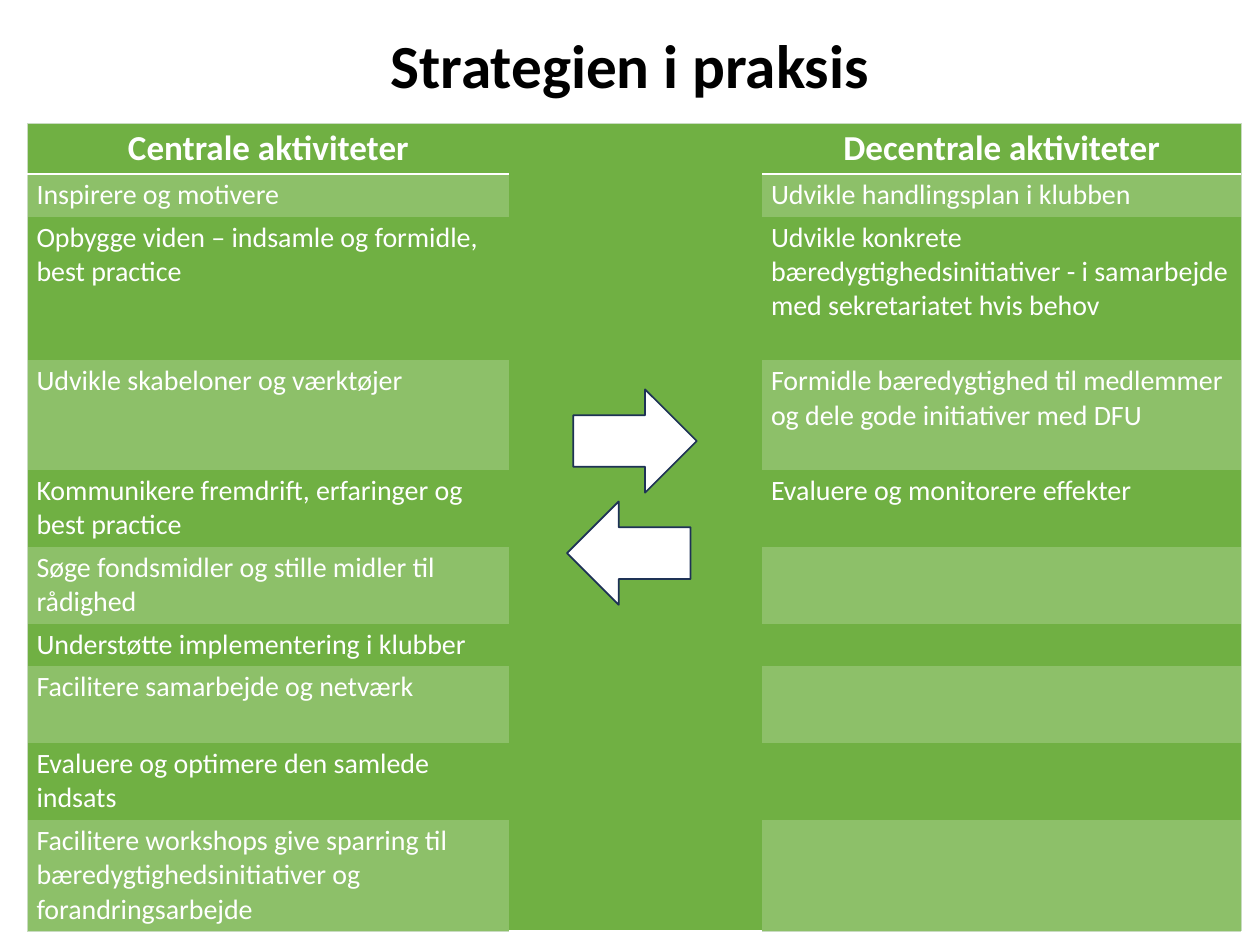
from dataclasses import dataclass

from lxml import etree
from pptx import Presentation
from pptx.dml.color import RGBColor
from pptx.enum.shapes import MSO_SHAPE
from pptx.enum.text import MSO_ANCHOR, PP_ALIGN
from pptx.oxml.ns import qn
from pptx.util import Inches, Pt

RIGHT_ARROW = MSO_SHAPE.RIGHT_ARROW
CENTER, LEFT = PP_ALIGN.CENTER, PP_ALIGN.LEFT
MIDDLE = MSO_ANCHOR.MIDDLE
TITLE_ONLY = 5
NO_STYLE_NO_GRID = "{2D5ABB26-0587-4C30-8999-92F81FD0307C}"


@dataclass(frozen=True)
class Theme:
    font: str = "Calibri"
    black: str = "000000"
    white: str = "FFFFFF"
    green: str = "70B043"
    light_green: str = "8DC069"
    frame: str = "C9DBC1"
    arrow_line: str = "1E3256"
    title_size: int = 35
    header_size: int = 20
    body_size: int = 16


THEME = Theme()
FRAME_LINE = (THEME.frame, 0.5)
HEADER_LINE = (THEME.white, 1.5)
CELL_MARGINS = {
    "margin_left": Inches(0.07),
    "margin_right": Inches(0.07),
    "margin_top": Inches(0.03),
    "margin_bottom": Inches(0.03),
}
COLUMN_WIDTHS = [3.82, 2.01, 3.8]
ROW_HEIGHTS = [0.39, 0.34, 1.14, 0.87, 0.61, 0.61, 0.34, 0.61, 0.61, 0.88]
CENTRAL = [
    "Centrale aktiviteter",
    "Inspirere og motivere",
    "Opbygge viden – indsamle og formidle, best practice",
    "Udvikle skabeloner og værktøjer",
    "Kommunikere fremdrift, erfaringer og best practice",
    "Søge fondsmidler og stille midler til rådighed",
    "Understøtte implementering i klubber",
    "Facilitere samarbejde og netværk",
    "Evaluere og optimere den samlede indsats",
    "Facilitere workshops give sparring til bæredygtighedsinitiativer og forandringsarbejde",
]
DECENTRAL = [
    "Decentrale aktiviteter",
    "Udvikle handlingsplan i klubben",
    "Udvikle konkrete bæredygtighedsinitiativer - i samarbejde med sekretariatet hvis behov",
    "Formidle bæredygtighed til medlemmer og dele gode initiativer med DFU",
    "Evaluere og monitorere effekter",
]


def rgb(color):
    return RGBColor.from_string(color)


def write_text(frame, text, size, color, bold=False, align=LEFT):
    paragraph = frame.paragraphs[0]
    paragraph.alignment = align
    if not text:
        etree.SubElement(paragraph._p, qn("a:endParaRPr"), sz=str(size * 100))
        return
    run = paragraph.add_run()
    run.text = text
    run.font.color.rgb = rgb(color)
    for name, value in {"name": THEME.font, "size": Pt(size), "bold": bold}.items():
        setattr(run.font, name, value)


def set_borders(cell, borders):
    """Draw the given sides; the schema wants the order L, R, T, B."""
    properties = cell._tc.get_or_add_tcPr()
    for side in "LRTB":
        if side in borders:
            color, width = borders[side]
            line = etree.SubElement(properties, qn(f"a:ln{side}"), w=str(Pt(width)))
            fill = etree.SubElement(line, qn("a:solidFill"))
            etree.SubElement(fill, qn("a:srgbClr"), val=color)


def cell_borders(row, column):
    """Frame the outer edge of the table and underline the header."""
    borders = {}
    if column == 0:
        borders["L"] = FRAME_LINE
    if column == 2:
        borders["R"] = FRAME_LINE
    if row == 0:
        borders.update(T=FRAME_LINE, B=HEADER_LINE)
    elif row == len(ROW_HEIGHTS) - 1 and column != 1:
        borders["B"] = FRAME_LINE
    return borders


def add_title(slide, text):
    title = slide.shapes.title
    place = {"left": 0.69, "top": -0.18, "width": 8.62, "height": 1.45}
    for name, value in place.items():
        setattr(title, name, Inches(value))
    title.text_frame.vertical_anchor = MIDDLE
    write_text(title.text_frame, text, THEME.title_size, THEME.black, True, CENTER)
    title.text_frame.paragraphs[0].line_spacing = 0.9


def format_cell(cell, row, column, text):
    for name, value in CELL_MARGINS.items():
        setattr(cell, name, value)
    set_borders(cell, cell_borders(row, column))
    banded = row % 2 == 1 and column != 1
    cell.fill.solid()
    cell.fill.fore_color.rgb = rgb(THEME.light_green if banded else THEME.green)
    if row == 0 and text:
        write_text(cell.text_frame, text, THEME.header_size, THEME.white, True, CENTER)
    else:
        write_text(cell.text_frame, text, THEME.body_size, THEME.white)


def add_activities(slide):
    row_count = len(ROW_HEIGHTS)
    table = slide.shapes.add_table(
        row_count, len(COLUMN_WIDTHS), Inches(0.22), Inches(0.98),
        Inches(sum(COLUMN_WIDTHS)), Inches(sum(ROW_HEIGHTS)),
    ).table
    table.first_row = table.horz_banding = False
    table._tbl.tblPr.find(qn("a:tableStyleId")).text = NO_STYLE_NO_GRID
    for column, width in zip(table.columns, COLUMN_WIDTHS):
        column.width = Inches(width)
    for row, height in zip(table.rows, ROW_HEIGHTS):
        row.height = Inches(height)
    for column, texts in enumerate([CENTRAL, [], DECENTRAL]):
        for row in range(row_count):
            text = texts[row] if row < len(texts) else ""
            format_cell(table.cell(row, column), row, column, text)
    table.cell(0, 1).merge(table.cell(row_count - 1, 1))


def add_arrow(slide, left, top, rotation=0):
    arrow = slide.shapes.add_shape(
        RIGHT_ARROW, Inches(left), Inches(top), Inches(0.98), Inches(0.82)
    )
    arrow.rotation = rotation
    arrow.shadow.inherit = False
    arrow.fill.solid()
    arrow.fill.fore_color.rgb = rgb(THEME.white)
    arrow.line.color.rgb = rgb(THEME.arrow_line)
    arrow.line.width = Pt(1)


def main():
    deck = Presentation()
    deck.slide_width, deck.slide_height = Inches(10), Inches(7.5)
    slide = deck.slides.add_slide(deck.slide_layouts[TITLE_ONLY])
    add_title(slide, "Strategien i praksis")
    add_activities(slide)
    add_arrow(slide, 4.55, 3.09)
    add_arrow(slide, 4.5, 3.98, rotation=180)
    deck.save("out.pptx")


if __name__ == "__main__":
    main()
